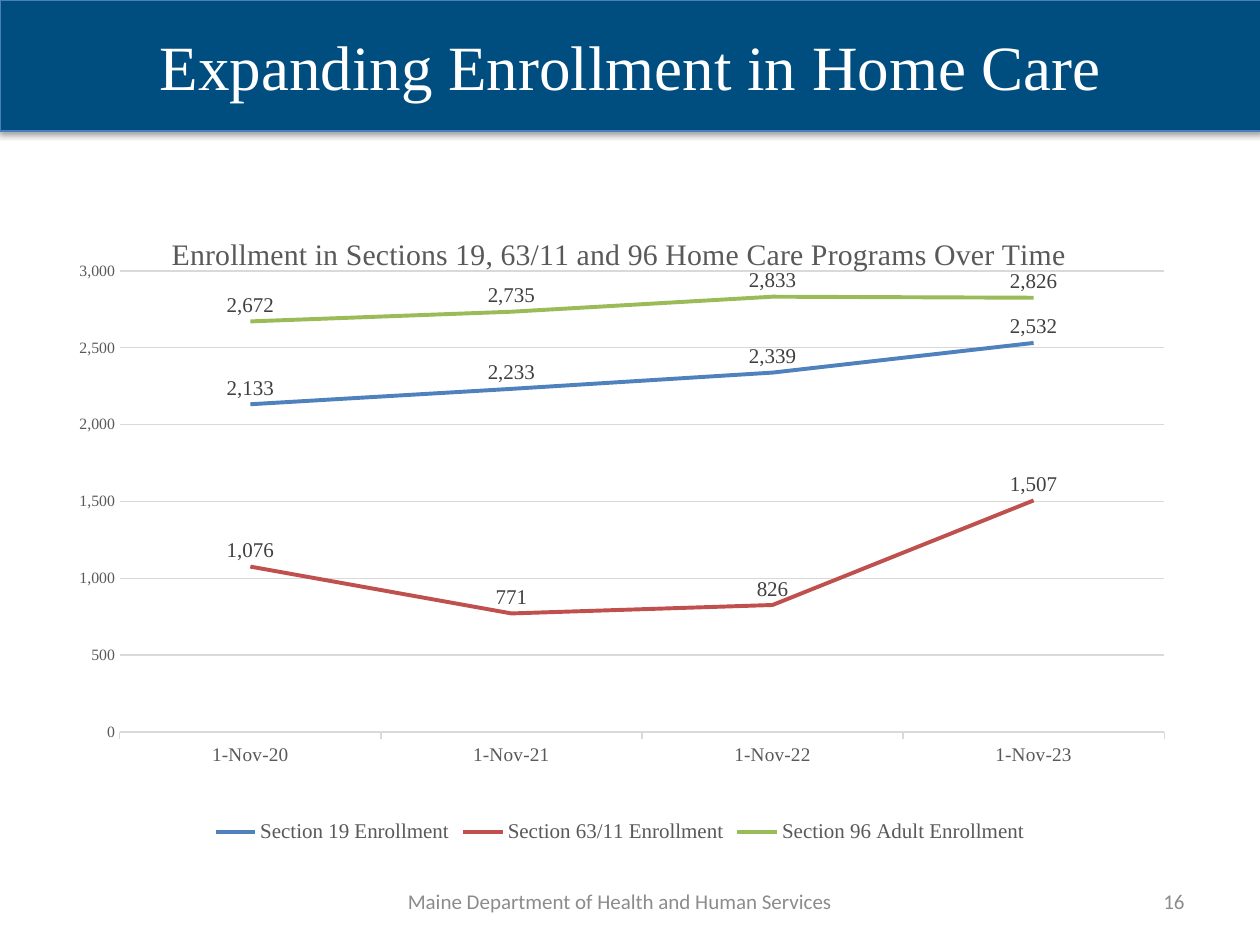
"""Build the home care enrollment slide with a banner title and a line chart."""
from lxml.etree import SubElement
from pptx import Presentation
from pptx.chart.data import CategoryChartData
from pptx.dml.color import RGBColor
from pptx.enum.chart import XL_CHART_TYPE, XL_LABEL_POSITION, XL_LEGEND_POSITION, XL_TICK_MARK
from pptx.enum.text import MSO_ANCHOR, PP_ALIGN
from pptx.oxml import parse_xml
from pptx.oxml.ns import nsdecls, qn
from pptx.util import Inches, Pt

COLORS = {
    "banner": "004D80", "banner_line": "4B7EBC", "white": "FFFFFF",
    "footer": "8C8C8C", "text": "595959", "label": "404040", "grid": "D9D9D9",
}
SERIF = "Times New Roman"
SERIES = {
    "Section 19 Enrollment": ("4F81BD", (2133, 2233, 2339, 2532)),
    "Section 63/11 Enrollment": ("C0504D", (1076, 771, 826, 1507)),
    "Section 96 Adult Enrollment": ("9BBB59", (2672, 2735, 2833, 2826)),
}


def format_font(font, size, color, name=SERIF):
    formats = {"size": Pt(size), "name": name, "bold": False}
    for attribute, value in formats.items():
        setattr(font, attribute, value)
    font.color.rgb = RGBColor.from_string(color)


def place_chart_part(element, index, values):
    for old_layout in element.findall(qn("c:layout")):
        element.remove(old_layout)
    layout = parse_xml(f"<c:layout {nsdecls('c')}/>")
    manual = SubElement(layout, qn("c:manualLayout"))
    for tag, value in values.items():
        SubElement(manual, qn(f"c:{tag}")).set("val", str(value))
    element.insert(index, layout)


presentation = Presentation()
presentation.slide_width, presentation.slide_height = Inches(10), Inches(7.5)
slide = presentation.slides.add_slide(presentation.slide_layouts[5])

title = slide.shapes.title
banner_box = {"left": 0, "top": 0, "width": 10.01, "height": 1.04}
for attribute, value in banner_box.items():
    setattr(title, attribute, Inches(value))
title.fill.solid()
title.fill.fore_color.rgb = RGBColor.from_string(COLORS["banner"])
title.line.color.rgb = RGBColor.from_string(COLORS["banner_line"])
title.line.width = Pt(0.75)
title._element.spPr.append(parse_xml(
    f'<a:effectLst {nsdecls("a")}><a:outerShdw blurRad="{Pt(3.1)}" dist="{Pt(1.8)}" '
    'dir="5400000" rotWithShape="0"><a:srgbClr val="000000"><a:alpha val="35000"/>'
    "</a:srgbClr></a:outerShdw></a:effectLst>"))
title.text_frame.text = "Expanding Enrollment in Home Care"
title.text_frame.vertical_anchor = MSO_ANCHOR.MIDDLE
title.text_frame.paragraphs[0].alignment = PP_ALIGN.CENTER
format_font(title.text_frame.paragraphs[0].runs[0].font, 36, COLORS["white"])

footers = (
    ("16", 7.17, 2.33, PP_ALIGN.RIGHT),
    ("Maine Department of Health and Human Services", 2.92, 4, PP_ALIGN.CENTER),
)
for text, left, width, alignment in footers:
    footer = slide.shapes.add_textbox(Inches(left), Inches(6.95), Inches(width), Inches(0.4))
    frame = footer.text_frame
    frame.text = text
    frame.word_wrap = True
    frame.vertical_anchor = MSO_ANCHOR.MIDDLE
    frame.paragraphs[0].alignment = alignment
    format_font(frame.paragraphs[0].runs[0].font, 12, COLORS["footer"], "Calibri")

chart_data = CategoryChartData(number_format="#,##0")
chart_data.categories = [f"1-Nov-{year}" for year in range(20, 24)]
for name, (color, values) in SERIES.items():
    chart_data.add_series(name, values)
chart = slide.shapes.add_chart(
    XL_CHART_TYPE.LINE, Inches(0.42), Inches(1.62), Inches(9), Inches(5.11), chart_data).chart
format_font(chart.font, 10, COLORS["text"])

chart.has_title = True
chart_title = chart.chart_title
chart_title.text_frame.text = "Enrollment in Sections 19, 63/11 and 96 Home Care Programs Over Time"
format_font(chart_title.text_frame.paragraphs[0].runs[0].font, 17, COLORS["text"])
place_chart_part(chart_title._element, 1, {"xMode": "edge", "yMode": "edge", "x": 0.1, "y": 0.04})
place_chart_part(chart._chartSpace.chart.plotArea, 0, {
    "layoutTarget": "inner", "xMode": "edge", "yMode": "edge",
    "x": 0.059, "y": 0.104, "w": 0.921, "h": 0.716})

chart.has_legend = True
chart.legend.position = XL_LEGEND_POSITION.BOTTOM
chart.legend.include_in_layout = False
format_font(chart.legend.font, 12, COLORS["text"])

category_axis, value_axis = chart.category_axis, chart.value_axis
axis_formats = (
    (category_axis, 11, {"major_tick_mark": XL_TICK_MARK.OUTSIDE, "has_major_gridlines": False}),
    (value_axis, 9, {"major_tick_mark": XL_TICK_MARK.NONE, "has_major_gridlines": True,
                     "minimum_scale": 0, "maximum_scale": 3000, "major_unit": 500}),
)
for axis, size, formats in axis_formats:
    for attribute, value in formats.items():
        setattr(axis, attribute, value)
    axis.minor_tick_mark = XL_TICK_MARK.NONE
    format_font(axis.tick_labels.font, size, COLORS["text"])
value_axis.tick_labels.number_format = "#,##0"
value_axis.tick_labels.number_format_is_linked = False
value_axis.format.line.fill.background()
for line in (category_axis.format.line, value_axis.major_gridlines.format.line):
    line.color.rgb = RGBColor.from_string(COLORS["grid"])
    line.width = Pt(0.75)

chart.plots[0].vary_by_categories = False
for series in chart.plots[0].series:
    series.smooth = False
    series.format.line.color.rgb = RGBColor.from_string(SERIES[series.name][0])
    series.format.line.width = Pt(2.25)
    labels = series.data_labels
    label_formats = {"show_value": True, "position": XL_LABEL_POSITION.ABOVE,
                     "number_format": "#,##0", "number_format_is_linked": False}
    for attribute, value in label_formats.items():
        setattr(labels, attribute, value)
    format_font(labels.font, 12, COLORS["label"])

presentation.save("out.pptx")
